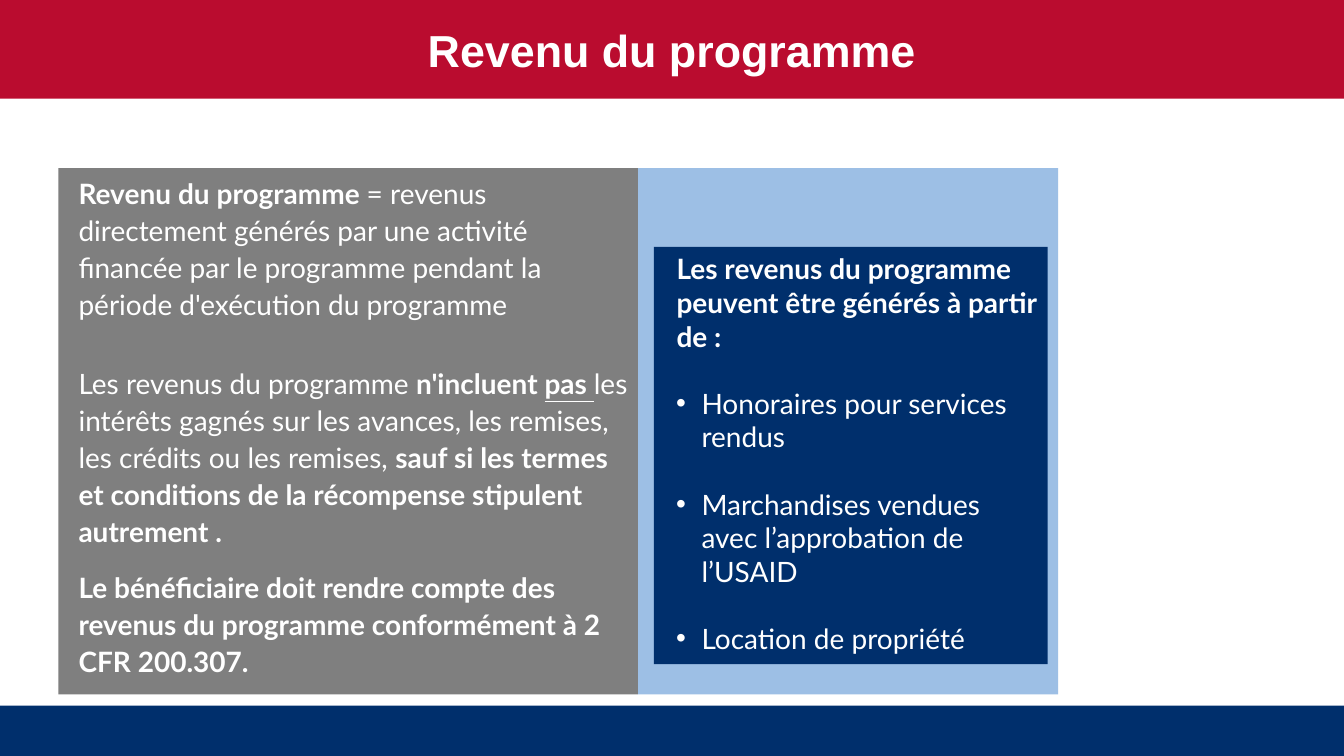
from lxml import etree
from pptx import Presentation
from pptx import util as u
from pptx.dml.color import RGBColor
from pptx.enum import shapes, text
from pptx.oxml import ns

WHITE = RGBColor(0xFF, 0xFF, 0xFF)
RED = RGBColor(0xBA, 0x0C, 0x2F)
NAVY = RGBColor(0x00, 0x2F, 0x6C)
LIGHT_BLUE = RGBColor(0x9D, 0xBF, 0xE5)
GREY = RGBColor(0x7F, 0x7F, 0x7F)

SLIDE_WIDTH, SLIDE_HEIGHT = 33.87, 19.05
FOOTER_HEIGHT = 1.27
PANEL_TOP, PANEL_HEIGHT = 4.24, 13.26
DEFINITION_LEFT, DEFINITION_WIDTH = 1.47, 14.61

# Each paragraph: space before in points, then runs of (wording, style letters).
DEFINITION = [
    (0, [("Revenu du programme ", "b"),
         ("= revenus directement générés par une activité financée par le "
          "programme pendant la période d'exécution du programme", "")]),
    (30, [("Les revenus du programme ", ""),
          ("n'incluent ", "b"),
          ("pas ", "bu"),
          ("les intérêts gagnés sur les avances, les remises, les crédits ou "
           "les remises, ", ""),
          ("sauf si les termes et conditions de la récompense stipulent "
           "autrement .", "b")]),
    (14, [("Le bénéficiaire doit rendre compte des revenus du programme "
           "conformément à 2 CFR 200.307.", "b")]),
]
SOURCES_HEADING = "Les revenus du programme peuvent être générés à partir de\u00a0:"
SOURCES = [
    "Honoraires pour services rendus",
    "Marchandises vendues avec l’approbation de l’USAID",
    "Location de propriété",
]


class SlideBuilder:
    def __init__(self, slide, font="Lato", size=20, color=WHITE):
        self.slide = slide
        self.font = font
        self.size = size
        self.color = color

    def block(self, left, top, width, height, fill, anchor=text.MSO_ANCHOR.TOP):
        """Draw a plain filled rectangle and return its text frame."""
        shape = self.slide.shapes.add_shape(
            shapes.MSO_SHAPE.RECTANGLE,
            u.Cm(left), u.Cm(top), u.Cm(width), u.Cm(height))
        shape.shadow.inherit = False
        shape.fill.solid()
        shape.fill.fore_color.rgb = fill
        shape.line.fill.background()
        frame = shape.text_frame
        frame.word_wrap = True
        frame.vertical_anchor = anchor
        return frame

    def paragraph(self, frame, runs, before=0, spacing=1.0, margin=0, bullet=False,
                  align=text.PP_ALIGN.LEFT, font=None, size=None):
        """Fill the frame's first paragraph, or add one once that is used."""
        first = frame.paragraphs[0]
        paragraph = frame.add_paragraph() if first.runs else first
        paragraph.alignment = align
        paragraph.line_spacing = spacing
        paragraph.space_before = u.Pt(before)
        properties = paragraph._p.get_or_add_pPr()
        properties.set("marL", str(u.Cm(margin)))
        properties.set("indent", str(u.Cm(-0.64 if bullet else 0)))
        if bullet:
            etree.SubElement(properties, ns.qn("a:buFont"), typeface="Arial")
            etree.SubElement(properties, ns.qn("a:buChar"), char="•")
        for wording, style in runs:
            run = paragraph.add_run()
            run.text = wording
            run.font.name = font or self.font
            run.font.size = u.Pt(size or self.size)
            run.font.color.rgb = self.color
            run.font.bold = "b" in style
            run.font.underline = "u" in style


def main():
    presentation = Presentation()
    presentation.slide_width = u.Cm(SLIDE_WIDTH)
    presentation.slide_height = u.Cm(SLIDE_HEIGHT)
    builder = SlideBuilder(presentation.slides.add_slide(presentation.slide_layouts[6]))

    builder.block(0, SLIDE_HEIGHT - FOOTER_HEIGHT, SLIDE_WIDTH, FOOTER_HEIGHT, NAVY)
    title = builder.block(0, 0, SLIDE_WIDTH, 2.49, RED, text.MSO_ANCHOR.MIDDLE)
    builder.paragraph(title, [("Revenu du programme", "b")],
                      align=text.PP_ALIGN.CENTER, font="Arial", size=32)

    definition = builder.block(DEFINITION_LEFT, PANEL_TOP, DEFINITION_WIDTH,
                               PANEL_HEIGHT, GREY)
    for before, runs in DEFINITION:
        builder.paragraph(definition, runs, before, spacing=1.1, margin=0.26)

    builder.block(DEFINITION_LEFT + DEFINITION_WIDTH, PANEL_TOP, 10.59,
                  PANEL_HEIGHT, LIGHT_BLUE)
    sources = builder.block(16.48, 6.22, 9.92, 10.52, NAVY)
    builder.paragraph(sources, [(SOURCES_HEADING, "b")], margin=0.32)
    for source in SOURCES:
        builder.paragraph(sources, [(source, "")], before=24, margin=0.95, bullet=True)

    presentation.save("out.pptx")


if __name__ == "__main__":
    main()
